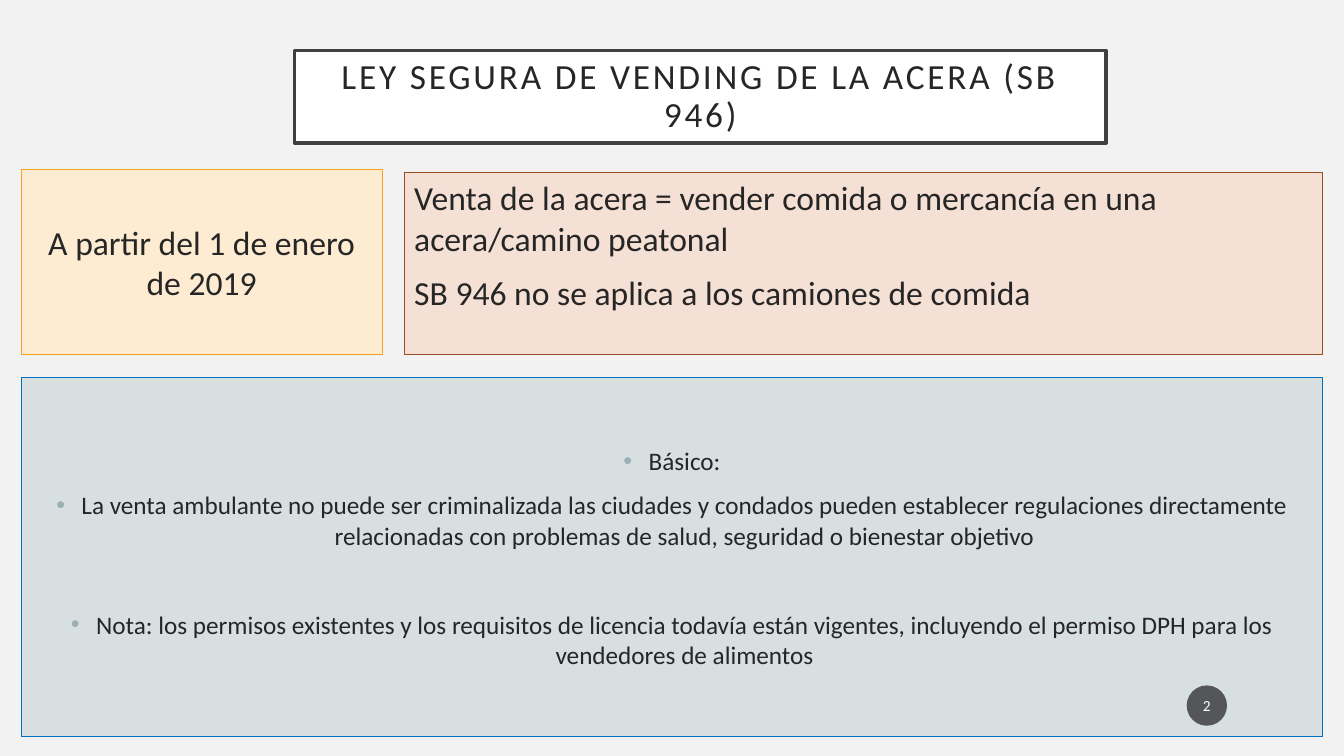
from dataclasses import dataclass

from lxml import etree
from pptx import Presentation
from pptx.dml.color import RGBColor
from pptx.enum.shapes import MSO_SHAPE
from pptx.enum.text import MSO_ANCHOR, PP_ALIGN
from pptx.oxml.ns import qn
from pptx.util import Inches, Pt

RECT, OVAL = MSO_SHAPE.RECTANGLE, MSO_SHAPE.OVAL
TOP, MIDDLE = MSO_ANCHOR.TOP, MSO_ANCHOR.MIDDLE
LEFT, CENTER = PP_ALIGN.LEFT, PP_ALIGN.CENTER


@dataclass(frozen=True)
class Theme:
    font: str = "Calibri"
    background: str = "F2F2F2"
    text: str = "262626"
    white: str = "FFFFFF"
    title_line: str = "404040"
    date_fill: str = "FDECD2"
    date_line: str = "F6A21D"
    definition_fill: str = "F5E0D5"
    definition_line: str = "974D25"
    basics_fill: str = "D7DFE1"
    basics_line: str = "0070C0"
    bullet: str = "9BAFB5"
    badge: str = "1D1D1D"
    title_size: float = 25.2
    lead_size: float = 24
    body_size: float = 18
    badge_size: float = 11


class SlideBuilder:
    def __init__(self, presentation, theme):
        self.theme = theme
        self.slide = presentation.slides.add_slide(presentation.slide_layouts[6])
        background = self.slide.background.fill
        background.solid()
        background.fore_color.rgb = RGBColor.from_string(theme.background)

    def box(self, at, fill, line=None, line_width=0.75, kind=RECT,
            anchor=MIDDLE, insets=(0.1, 0.05)):
        shape = self.slide.shapes.add_shape(kind, *map(Inches, at))
        shape.shadow.inherit = False
        shape.fill.solid()
        shape.fill.fore_color.rgb = RGBColor.from_string(fill)
        if line:
            shape.line.color.rgb = RGBColor.from_string(line)
            shape.line.width = Pt(line_width)
        else:
            shape.line.fill.background()
        frame = shape.text_frame
        frame.word_wrap = True
        frame.vertical_anchor = anchor
        frame.margin_left = frame.margin_right = Inches(insets[0])
        frame.margin_top = frame.margin_bottom = Inches(insets[1])
        return shape

    def add_text(self, shape, texts, size, color=None, align=CENTER, before=10):
        frame = shape.text_frame
        for index, text in enumerate(texts):
            paragraph = frame.add_paragraph() if index else frame.paragraphs[0]
            paragraph.text = text
            paragraph.alignment = align
            paragraph.space_before = Pt(before)
            paragraph.font.name = self.theme.font
            paragraph.font.size = Pt(size)
            paragraph.font.color.rgb = RGBColor.from_string(color or self.theme.text)
        return frame.paragraphs

    def title(self, at, text):
        shape = self.box(at, self.theme.white, self.theme.title_line, 2.5,
                         insets=(0.2, 0.2))
        heading = self.add_text(shape, [text], self.theme.title_size, before=0)[0]
        heading.line_spacing = 0.9
        # Letter spacing, in hundredths of a point
        heading.runs[0].font._element.set("spc", "200")

    def bullets(self, shape, texts):
        paragraphs = self.add_text(shape, texts, self.theme.body_size)
        for paragraph in paragraphs:
            properties = paragraph._p.get_or_add_pPr()
            properties.set("marL", str(Inches(0.25)))
            properties.set("indent", str(Inches(-0.25)))
            color = etree.Element(qn("a:buClr"))
            etree.SubElement(color, qn("a:srgbClr"), val=self.theme.bullet)
            font = etree.Element(qn("a:buFont"), typeface="Arial")
            mark = etree.Element(qn("a:buChar"), char="•")
            defaults = properties.find(qn("a:defRPr"))
            for element in (color, font, mark):
                defaults.addprevious(element)
        return paragraphs

    def badge(self, at, number):
        shape = self.box(at, self.theme.badge, kind=OVAL, insets=(0.02, 0.05))
        color = shape.fill._xPr.find(qn("a:solidFill"))[0]
        etree.SubElement(color, qn("a:alpha"), val="70000")
        self.add_text(shape, [number], self.theme.badge_size, self.theme.white, before=0)


def main():
    presentation = Presentation()
    presentation.slide_width = Inches(13.33)
    presentation.slide_height = Inches(7.5)
    theme = Theme()
    page = SlideBuilder(presentation, theme)

    # Effective date
    date = page.box((0.21, 1.68, 3.58, 1.84), theme.date_fill, theme.date_line)
    page.add_text(date, ["A partir del 1 de enero de 2019"], theme.lead_size)

    # Basics, with a wide gap before the closing note
    basics = page.box((0.21, 3.75, 12.91, 3.56), theme.basics_fill, theme.basics_line)
    note = page.bullets(basics, [
        "Básico:",
        "La venta ambulante no puede ser criminalizada las ciudades y condados "
        "pueden establecer regulaciones directamente relacionadas con problemas "
        "de salud, seguridad o bienestar objetivo",
        "Nota: los permisos existentes y los requisitos de licencia todavía están "
        "vigentes, incluyendo el permiso DPH para los vendedores de alimentos",
    ])[-1]
    note.space_before = Pt(42)

    # Title
    page.title((2.92, 0.5, 8.05, 0.92), "LEY SEGURA DE VENDING DE LA ACERA (SB 946)")

    # Definition and scope
    definition = page.box((4.01, 1.71, 9.11, 1.81), theme.definition_fill,
                          theme.definition_line, anchor=TOP)
    page.add_text(definition, [
        "Venta de la acera = vender comida o mercancía en una acera/camino peatonal",
        "SB 946 no se aplica a los camiones de comida",
    ], theme.lead_size, align=LEFT)

    # Page number
    page.badge((11.77, 6.8, 0.4, 0.4), "2")

    presentation.save("out.pptx")


if __name__ == "__main__":
    main()
